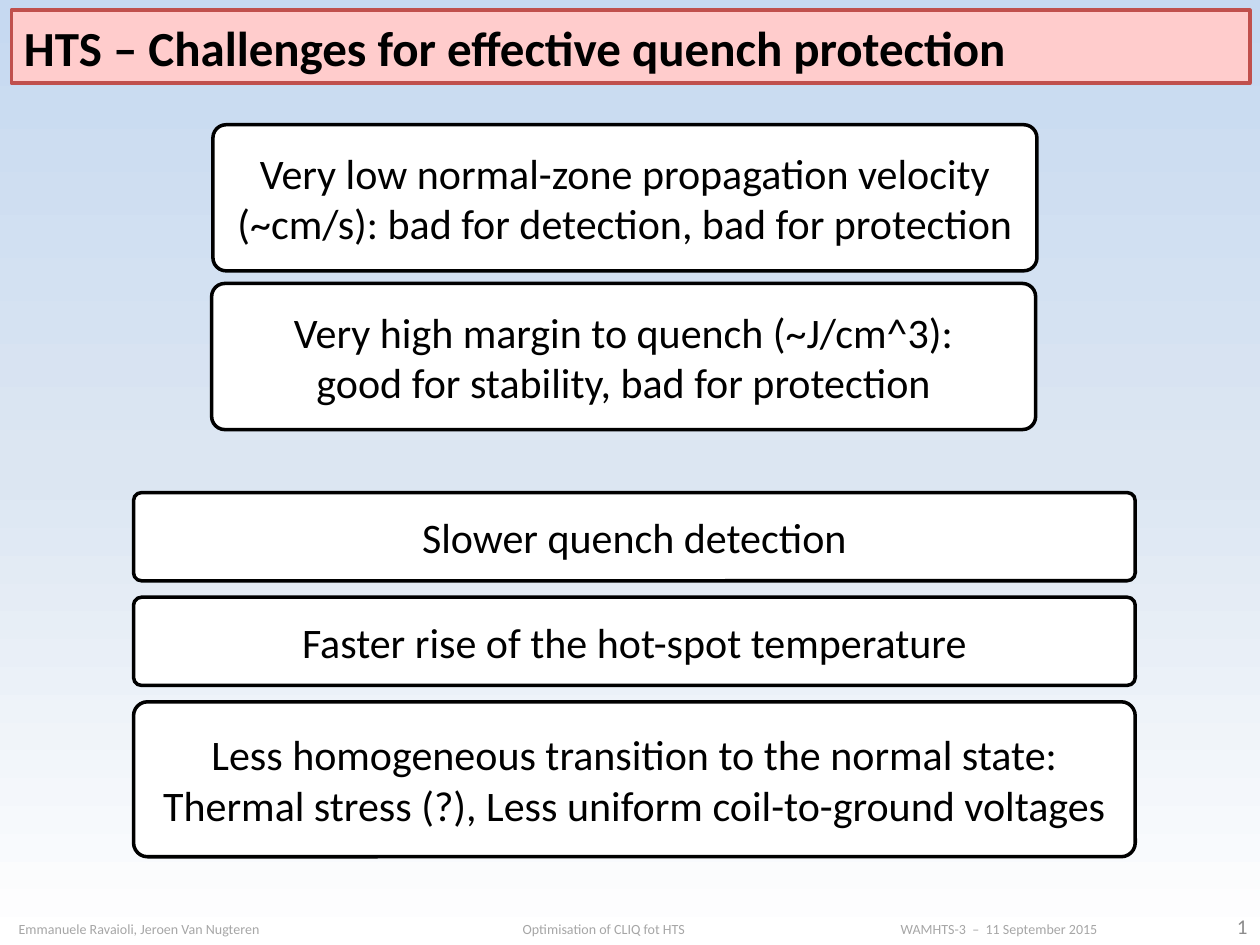
from copy import deepcopy
from lxml import etree
from pptx import Presentation
from pptx.dml.color import RGBColor
from pptx.enum.shapes import MSO_SHAPE
from pptx.enum.text import MSO_ANCHOR, MSO_AUTO_SIZE, PP_ALIGN
from pptx.oxml.ns import qn
from pptx.util import Inches, Pt


def paint(color, hex_value):
    color.rgb = RGBColor.from_string(hex_value)


def style(font, size, hex_value, bold=False):
    font.name = "Calibri"
    font.size = Pt(size)
    font.bold = bold
    paint(font.color, hex_value)


prs = Presentation()
prs.slide_width = Inches(10)
prs.slide_height = Inches(7.5)
slide = prs.slides.add_slide(prs.slide_layouts[5])

backdrop = slide.background.fill
backdrop.gradient()
backdrop.gradient_angle = 270
stops = slide.element.find(".//" + qn("a:gsLst"))
stops.insert(1, deepcopy(stops[0]))
for stop, (position, hex_value) in zip(
    backdrop.gradient_stops, [(0, "C6D9F1"), (0.5, "DCE6F2"), (1, "FFFFFF")]
):
    stop.position = position
    paint(stop.color, hex_value)

title = slide.shapes.title
title.left, title.top = Inches(0.09), Inches(0.08)
title.width, title.height = Inches(9.83), Inches(0.58)
title.fill.solid()
paint(title.fill.fore_color, "FFCCCC")
paint(title.line.color, "C0504D")
title.line.width = Pt(2)
heading = title.text_frame
heading.auto_size = MSO_AUTO_SIZE.NONE
heading.vertical_anchor = MSO_ANCHOR.MIDDLE
heading.paragraphs[0].alignment = PP_ALIGN.LEFT
heading_run = heading.paragraphs[0].add_run()
heading_run.text = "HTS – Challenges for effective quench protection"
style(heading_run.font, 28, "000000", bold=True)

page = slide.shapes.add_textbox(Inches(9.41), Inches(7.21), Inches(0.59), Inches(0.28)).text_frame
page.word_wrap = True
page.vertical_anchor = MSO_ANCHOR.MIDDLE
page_line = page.paragraphs[0]
page_line.alignment = PP_ALIGN.RIGHT
page_run = page_line.add_run()
page_run.text = "3"
style(page_run.font, 12, "8C8C8C")
number_field = etree.SubElement(
    page_line._p, qn("a:fld"), id="{B6F15528-21DE-4FAA-801E-634DDDAF4B2B}", type="slidenum"
)
number_field.extend(list(page_run._r))
page_line._p.remove(page_run._r)

footer = slide.shapes.add_textbox(Inches(0.05), Inches(7.29), Inches(9.83), Inches(0.17)).text_frame
footer.word_wrap = True
footer.vertical_anchor = MSO_ANCHOR.MIDDLE
footer_line = footer.paragraphs[0]
tabs = etree.SubElement(footer_line._p.get_or_add_pPr(), qn("a:tabLst"))
for tab_position in (4, 7):
    etree.SubElement(tabs, qn("a:tab"), pos=str(Inches(tab_position)), algn="l")
for part in (
    "Emmanuele Ravaioli, Jeroen Van Nugteren",
    "\tOptimisation of CLIQ fot HTS",
    "\tWAMHTS-3  –  11 September 2015",
):
    footer_run = footer_line.add_run()
    footer_run.text = part
    style(footer_run.font, 8, "A6A6A6")

statements = [
    (1.69, 0.99, 6.54, 1.16, [
        "Very low normal-zone propagation velocity (~cm/s): bad for detection, bad for protection"]),
    (1.68, 2.25, 6.54, 1.16, [
        "Very high margin to quench (~J/cm^3):",
        "good for stability, bad for protection"]),
    (1.06, 3.91, 7.95, 0.7, ["Slower quench detection"]),
    (1.06, 4.74, 7.95, 0.7, ["Faster rise of the hot-spot temperature"]),
    (1.06, 5.57, 7.95, 1.23, [
        "Less homogeneous transition to the normal state: "
        "Thermal stress (?), Less uniform coil-to-ground voltages"]),
]
for left, top, width, height, lines in statements:
    card = slide.shapes.add_shape(
        MSO_SHAPE.ROUNDED_RECTANGLE, Inches(left), Inches(top), Inches(width), Inches(height)
    )
    card.adjustments[0] = 0.09
    card.shadow.inherit = False
    card.fill.solid()
    paint(card.fill.fore_color, "FFFFFF")
    paint(card.line.color, "000000")
    card.line.width = Pt(2)
    message = card.text_frame
    message.word_wrap = True
    message.vertical_anchor = MSO_ANCHOR.MIDDLE
    message.margin_left = message.margin_right = 0
    for index, line in enumerate(lines):
        paragraph = message.add_paragraph() if index else message.paragraphs[0]
        paragraph.alignment = PP_ALIGN.CENTER
        run = paragraph.add_run()
        run.text = line
        style(run.font, 24, "000000")

prs.save("out.pptx")
